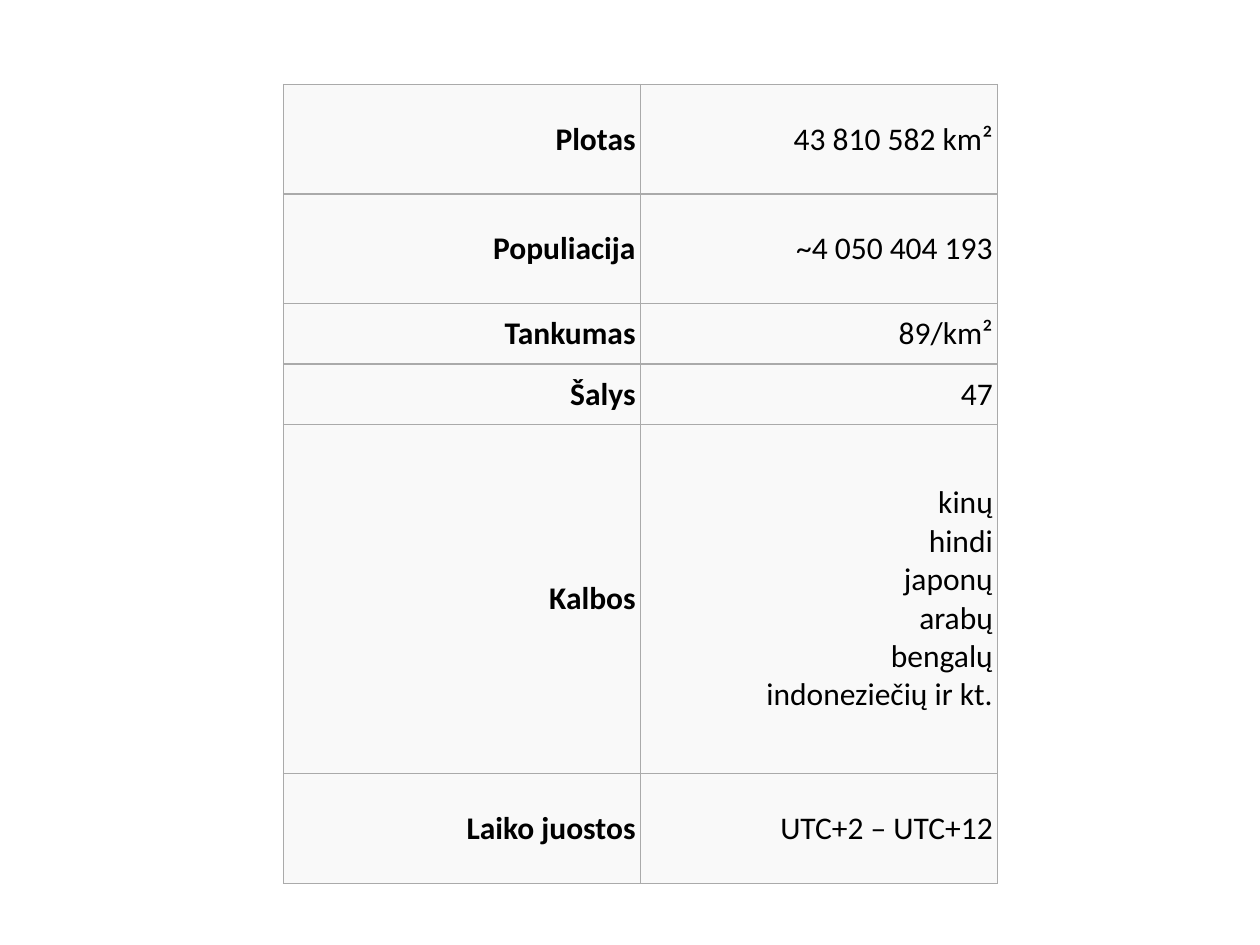
from lxml.etree import SubElement
from pptx import Presentation
from pptx.dml.color import RGBColor
from pptx.enum.text import MSO_ANCHOR, PP_ALIGN
from pptx.oxml.ns import qn
from pptx.util import Inches, Pt

COLORS = {"text": "000000", "cell": "F9F9F9", "border": "AAAAAA"}
FONT = "Calibri"
FACTS = [
    ("Plotas", "43 810 582 km²", 0.87),
    ("Populiacija", "~4 050 404 193", 0.87),
    ("Tankumas", "89/km²", 0.48),
    ("Šalys", "47", 0.48),
    ("Kalbos", "kinų\nhindi\njaponų\narabų\nbengalų\nindoneziečių ir kt.", 2.77),
    ("Laiko juostos", "UTC+2 – UTC+12", 0.87),
]


def add_borders(cell):
    properties = cell._tc.get_or_add_tcPr()
    for position, side in enumerate(("lnL", "lnR", "lnT", "lnB")):
        line = SubElement(properties, qn(f"a:{side}"), w=str(Pt(0.75)))
        fill = SubElement(line, qn("a:solidFill"))
        SubElement(fill, qn("a:srgbClr"), val=COLORS["border"])
        properties.insert(position, line)


def fill_cell(cell, text, bold):
    cell.margin_left = cell.margin_right = Inches(0.04)
    cell.margin_top = cell.margin_bottom = Inches(0.04)
    cell.vertical_anchor = MSO_ANCHOR.MIDDLE
    cell.fill.solid()
    cell.fill.fore_color.rgb = RGBColor.from_string(COLORS["cell"])
    add_borders(cell)
    paragraph = cell.text_frame.paragraphs[0]
    paragraph.text = text
    paragraph.alignment = PP_ALIGN.RIGHT
    for run in paragraph.runs:
        run.font.name = FONT
        run.font.size = Pt(18)
        run.font.bold = bold
        run.font.color.rgb = RGBColor.from_string(COLORS["text"])


def add_facts(slide, left, top, width, height):
    facts = slide.shapes.add_table(len(FACTS), 2, left, top, width, height).table
    facts.first_row = False
    facts.horz_banding = False
    for column in facts.columns:
        column.width = width // 2
    for index, (label, value, row_height) in enumerate(FACTS):
        facts.rows[index].height = Inches(row_height)
        fill_cell(facts.cell(index, 0), label, True)
        fill_cell(facts.cell(index, 1), value, False)


def main():
    presentation = Presentation()
    presentation.slide_width = Inches(10)
    presentation.slide_height = Inches(7.5)
    slide = presentation.slides.add_slide(presentation.slide_layouts[6])
    add_facts(slide, Inches(2.25), Inches(0.67), Inches(5.67), Inches(6.33))
    presentation.save("out.pptx")


if __name__ == "__main__":
    main()
